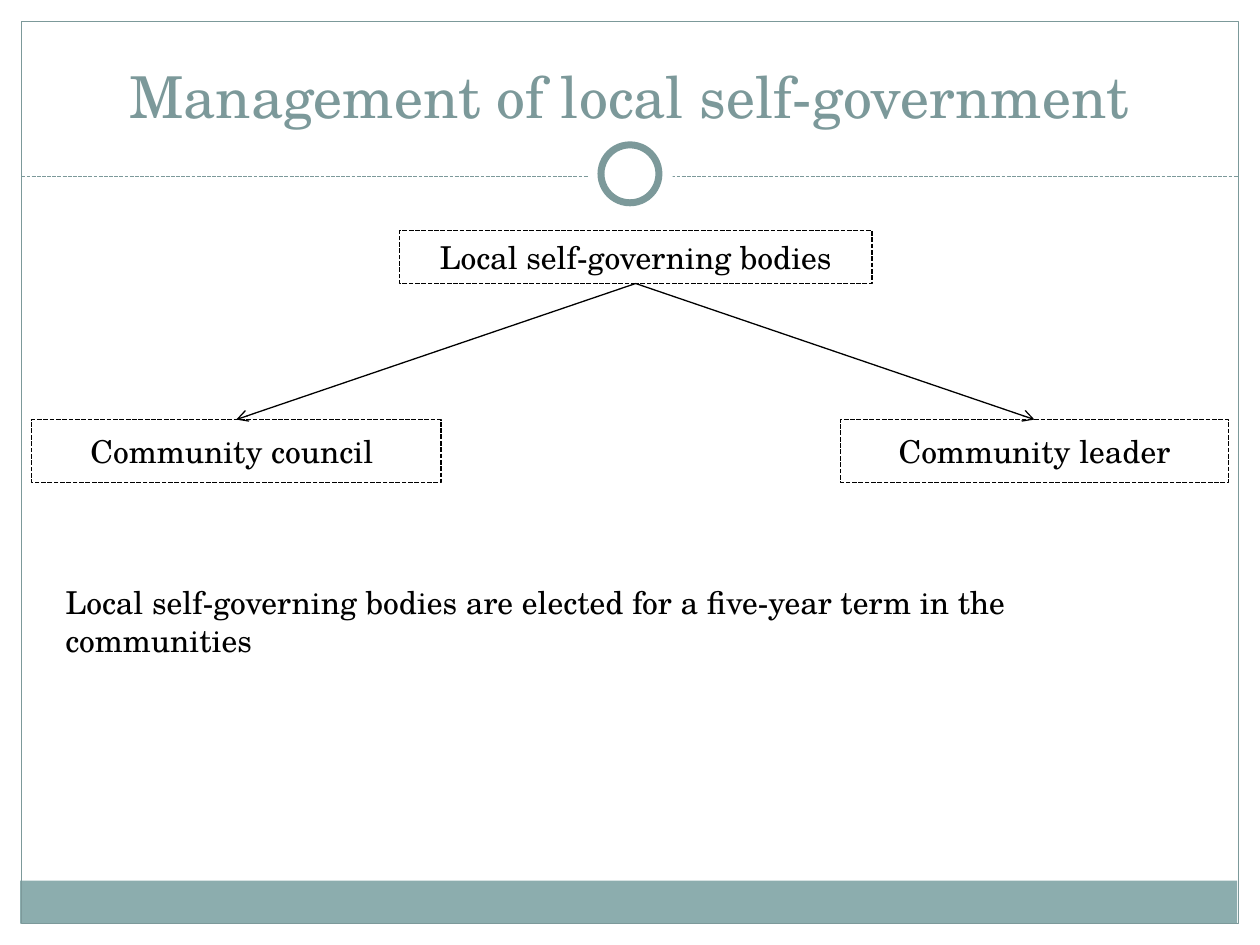
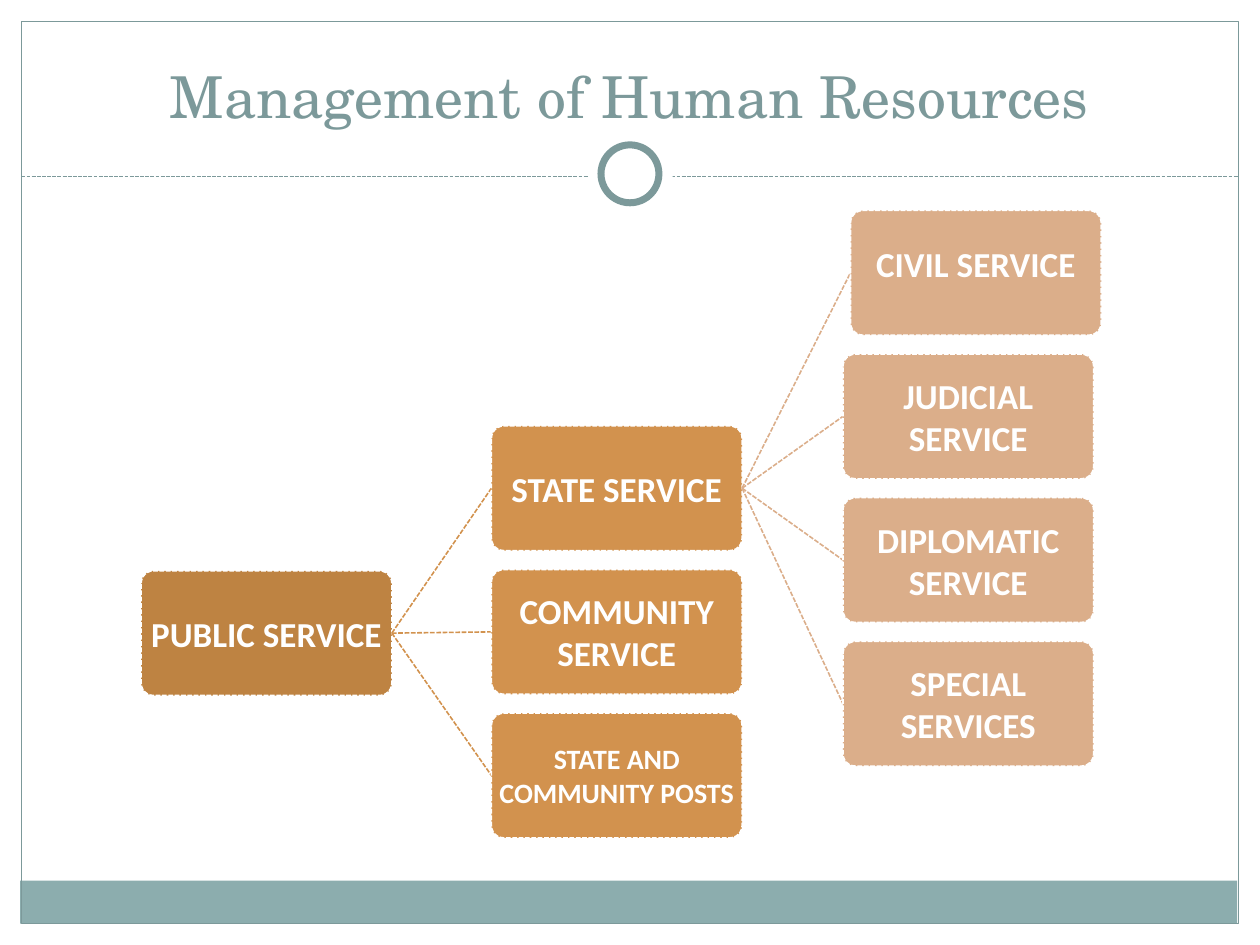
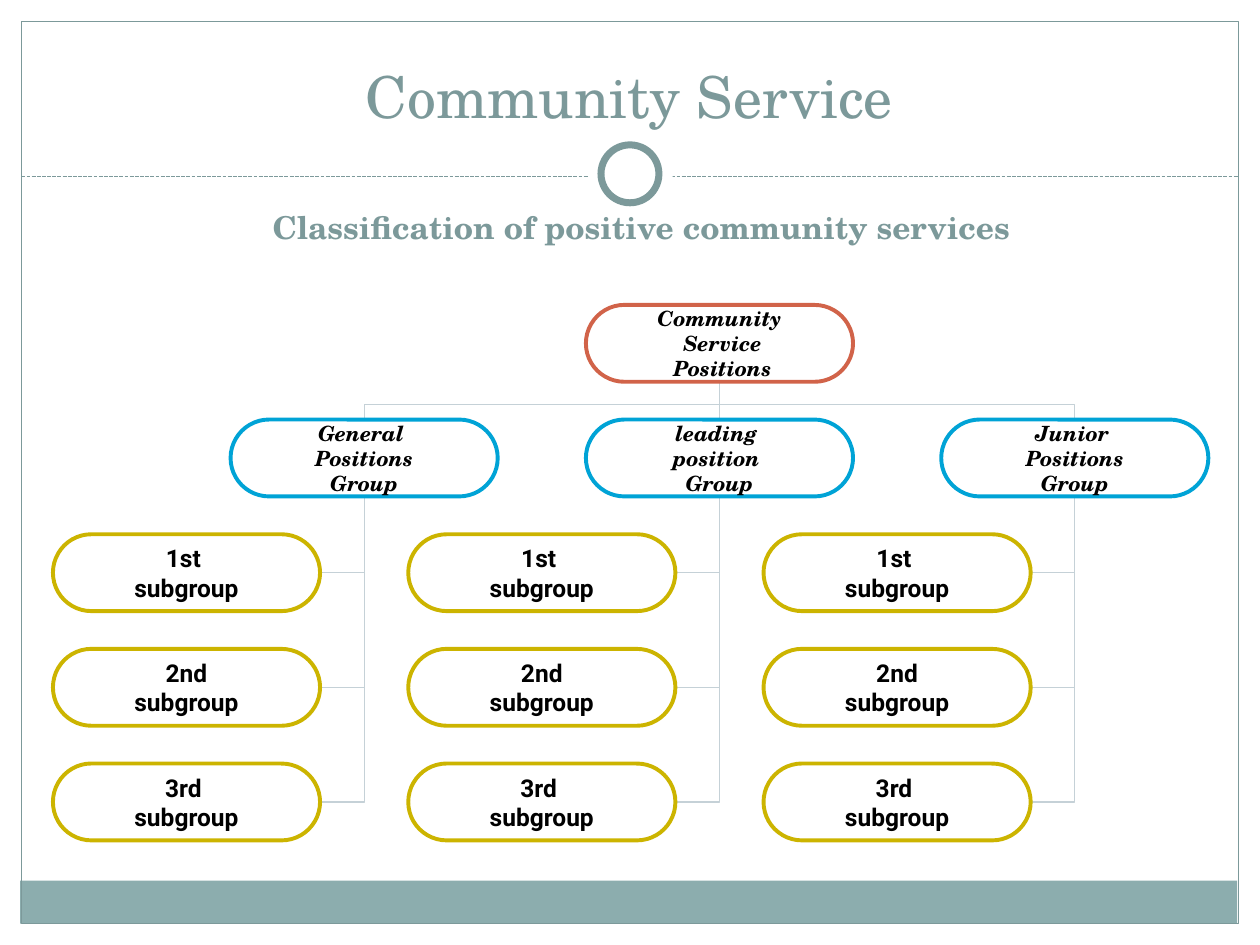
from dataclasses import dataclass

from lxml import etree
from pptx import Presentation
from pptx.dml.color import RGBColor
from pptx.enum.dml import MSO_LINE
from pptx.enum.shapes import MSO_CONNECTOR, MSO_SHAPE
from pptx.enum.text import MSO_ANCHOR, MSO_AUTO_SIZE, PP_ALIGN
from pptx.oxml.ns import qn
from pptx.util import Inches, Pt

SERIF, SANS, SUBGROUP_FONT = "TeX Gyre Schola", "Calibri", "Roboto"
WHITE, BLACK = "FFFFFF", "000000"
TEAL, BAND = "7C999A", "8CADAE"
BROWN, ORANGE, PEACH = "BE8342", "D2924E", "DBAE8A"
RED, BLUE, GOLD, TREE_LINE = "D16349", "00A3D6", "CCB400", "C5D1D7"


@dataclass
class Box:
    """A rectangle in inches."""
    left: float
    top: float
    width: float
    height: float

    def inner(self, left, top, width, height):
        return Box(self.left + left, self.top + top, width, height)

    def lengths(self):
        return [Inches(v) for v in (self.left, self.top, self.width, self.height)]

    @property
    def right(self):
        return self.left + self.width

    @property
    def bottom(self):
        return self.top + self.height

    @property
    def center(self):
        return self.left + self.width / 2

    @property
    def middle(self):
        return self.top + self.height / 2


PAGE = Box(0, 0, 10, 7.5)
BODY = Box(0, 1.5, 10, 5.49)


def color(value):
    return RGBColor.from_string(value)


def style_line(line, stroke, width, dashed=False):
    line.color.rgb = color(stroke)
    line.width = Pt(width)
    if dashed:
        line.dash_style = MSO_LINE.SQUARE_DOT


def add_box(page, kind, box, fill=None, stroke=None, width=0.75, dashed=False, round_by=None):
    shape = page.shapes.add_shape(kind, *box.lengths())
    shape.shadow.inherit = False
    if fill:
        shape.fill.solid()
        shape.fill.fore_color.rgb = color(fill)
    else:
        shape.fill.background()
    if stroke:
        style_line(shape.line, stroke, width, dashed)
    else:
        shape.line.fill.background()
    if round_by is not None:
        shape.adjustments[0] = round_by
    return shape


def write(shape, text, size, font=SERIF, ink=BLACK, bold=False, italic=False,
          align=PP_ALIGN.CENTER, anchor=MSO_ANCHOR.MIDDLE, inset=None, wrap=True):
    frame = shape.text_frame
    frame.word_wrap = wrap
    frame.vertical_anchor = anchor
    if inset is not None:
        frame.margin_left = frame.margin_right = Inches(inset)
        frame.margin_top = frame.margin_bottom = Inches(inset)
    frame.text = text
    for para in frame.paragraphs:
        para.alignment = align
        for span in para.runs:
            span.font.name, span.font.size = font, Pt(size)
            span.font.bold, span.font.italic = bold, italic
            span.font.color.rgb = color(ink)
    return frame


def add_label(page, box, text, size, **style):
    return write(page.shapes.add_textbox(*box.lengths()), text, size, **style)


def connect(page, start, end, stroke, width=0.75, dashed=False, arrow=False, elbow=False):
    """Join two points; an elbow runs sideways first, then up or down."""
    kind = MSO_CONNECTOR.ELBOW if elbow else MSO_CONNECTOR.STRAIGHT
    line = page.shapes.add_connector(kind, *[Inches(v) for v in (*start, *end)])
    style_line(line.line, stroke, width, dashed)
    properties = line._element.spPr
    if elbow:
        properties.find(qn("a:prstGeom")).set("prst", "bentConnector2")
    if arrow:
        tail = etree.SubElement(properties.find(qn("a:ln")), qn("a:tailEnd"))
        tail.set("type", "arrow")
    etree.SubElement(properties, qn("a:effectLst"))


def draw_frame(page, box, title):
    """Border, bottom band, dashed rule with ring, and title."""
    border = box.inner(0.17, 0.17, 9.66, 7.16)
    add_box(page, MSO_SHAPE.RECTANGLE, box.inner(0.16, 6.99, 9.66, 0.34), BAND)
    add_box(page, MSO_SHAPE.RECTANGLE, border, stroke=TEAL)
    rule = box.top + 1.4
    connect(page, (border.left, rule), (border.right, rule), TEAL, dashed=True)
    add_box(page, MSO_SHAPE.OVAL, box.inner(4.67, 1.05, 0.67, 0.67), WHITE)
    add_box(page, MSO_SHAPE.OVAL, box.inner(4.77, 1.15, 0.46, 0.46), WHITE, TEAL, 4)
    add_label(page, box.inner(0.33, 0.25, 9.33, 0.83), title, 33, ink=TEAL,
              anchor=MSO_ANCHOR.BOTTOM)


def draw_governing_bodies(page, box):
    root = box.inner(3.17, 0.33, 3.75, 0.42)
    council = box.inner(0.25, 1.83, 3.25, 0.5)
    leader = box.inner(6.67, 1.83, 3.08, 0.5)
    for place, text in ((root, "Local self-governing bodies"),
                        (council, "Community council "),
                        (leader, "Community leader")):
        shape = add_box(page, MSO_SHAPE.RECTANGLE, place, WHITE, BLACK, 0.9, dashed=True)
        write(shape, text, 18)
    for child in (council, leader):
        connect(page, (root.center, root.bottom), (child.center, child.top), BLACK, arrow=True)
    note = add_label(
        page, box.inner(0.42, 3.08, 9.17, 0.4),
        "Local self-governing bodies are elected for a five-year term in the communities",
        18, align=PP_ALIGN.LEFT, anchor=MSO_ANCHOR.TOP)
    note.auto_size = MSO_AUTO_SIZE.SHAPE_TO_FIT_TEXT


def draw_service_tree(page, box):
    card_width, card_height, step = 1.99, 0.99, 1.14

    def add_card(left, top, text, fill, parent=None, size=20):
        card = box.inner(left, top, card_width, card_height)
        if parent:
            connect(page, (parent.right, parent.middle), (card.left, card.middle),
                    fill, 0.9, dashed=True)
        shape = add_box(page, MSO_SHAPE.ROUNDED_RECTANGLE, card, fill, WHITE, 0.9,
                        dashed=True, round_by=0.1)
        return card, write(shape, text, size, SANS, WHITE, bold=True, inset=0.01)

    public, _ = add_card(1.12, 3.03, "PUBLIC SERVICE", BROWN)
    state, _ = add_card(3.9, 1.88, "STATE SERVICE", ORANGE, public)
    add_card(3.9, 1.88 + step, "COMMUNITY SERVICE", ORANGE, public)
    add_card(3.9, 1.88 + 2 * step, "STATE AND COMMUNITY POSTS", ORANGE, public, 16)

    _, civil = add_card(6.75, 0.17, "CIVIL SERVICE", PEACH, state)
    civil.margin_bottom = Inches(0.16)
    for row, text in enumerate(("JUDICIAL SERVICE", "DIPLOMATIC SERVICE", "SPECIAL SERVICES"), 1):
        add_card(6.69, 0.17 + row * step, text, PEACH, state)


def draw_positions_chart(page, box):
    pill_width, pill_height = 2.12, 0.61
    column_step, row_step = 2.82, 0.91

    def pill_at(left, top):
        return box.inner(left, top, pill_width, pill_height)

    def add_pill(place, text, stroke, size=12, font=SERIF, italic=True):
        shape = add_box(page, MSO_SHAPE.ROUNDED_RECTANGLE, place, stroke=stroke,
                        width=2.25, round_by=0.5)
        write(shape, text, size, font, bold=True, italic=italic, inset=0, wrap=False)

    add_label(page, box.inner(0.83, 0.08, 8.52, 0.42),
              "Classification of positive community services", 18, ink=TEAL, bold=True,
              anchor=MSO_ANCHOR.BOTTOM)

    root = pill_at(1.83 + column_step, 0.92)
    fork = root.bottom + 0.18
    group_names = ("General \nPositions\nGroup", "leading \nposition \nGroup",
                   "Junior \nPositions\nGroup")
    subgroup_names = ("1st \nsubgroup", "2nd\nsubgroup", "3rd \nsubgroup")

    for column, group_name in enumerate(group_names):
        shift = column * column_step
        group = pill_at(1.83 + shift, 1.83)
        if column == 1:
            connect(page, (root.center, root.bottom), (group.center, group.top), TREE_LINE)
        else:
            connect(page, (root.center, fork), (group.center, group.top), TREE_LINE, elbow=True)
        for row, subgroup_name in enumerate(subgroup_names):
            subgroup = pill_at(0.42 + shift, 2.74 + row * row_step)
            connect(page, (subgroup.right, subgroup.middle), (group.center, group.bottom),
                    TREE_LINE, elbow=True)
            add_pill(subgroup, subgroup_name, GOLD, 14, SUBGROUP_FONT, italic=False)
        add_pill(group, group_name, BLUE)
    add_pill(root, "Community\n Service\n Positions", RED)


def main():
    deck = Presentation()
    deck.slide_width, deck.slide_height = Inches(PAGE.width), Inches(PAGE.height)
    slides = (
        ("Management of local self-government", draw_governing_bodies),
        ("Management of Human Resources", draw_service_tree),
        ("Community Service", draw_positions_chart),
    )
    for title, draw_body in slides:
        page = deck.slides.add_slide(deck.slide_layouts[6])
        draw_frame(page, PAGE, title)
        draw_body(page, BODY)
    deck.save("out.pptx")


if __name__ == "__main__":
    main()
